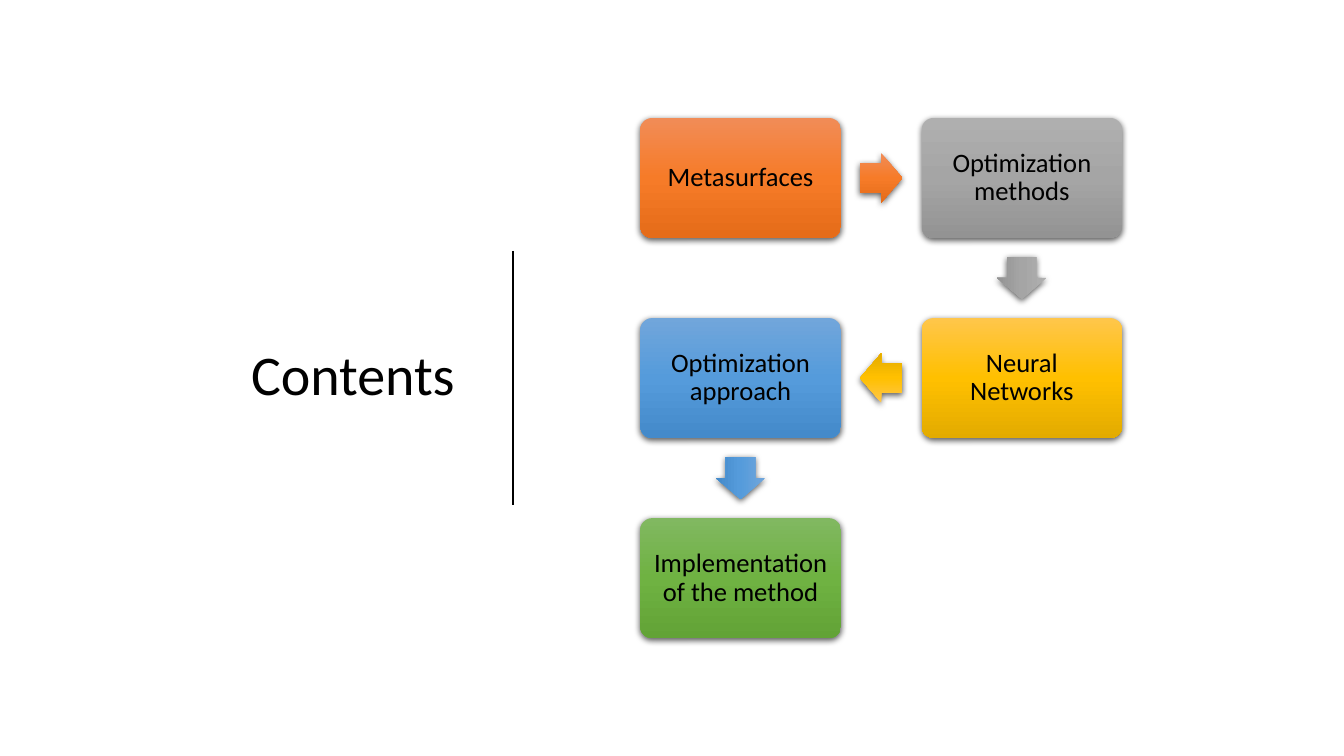
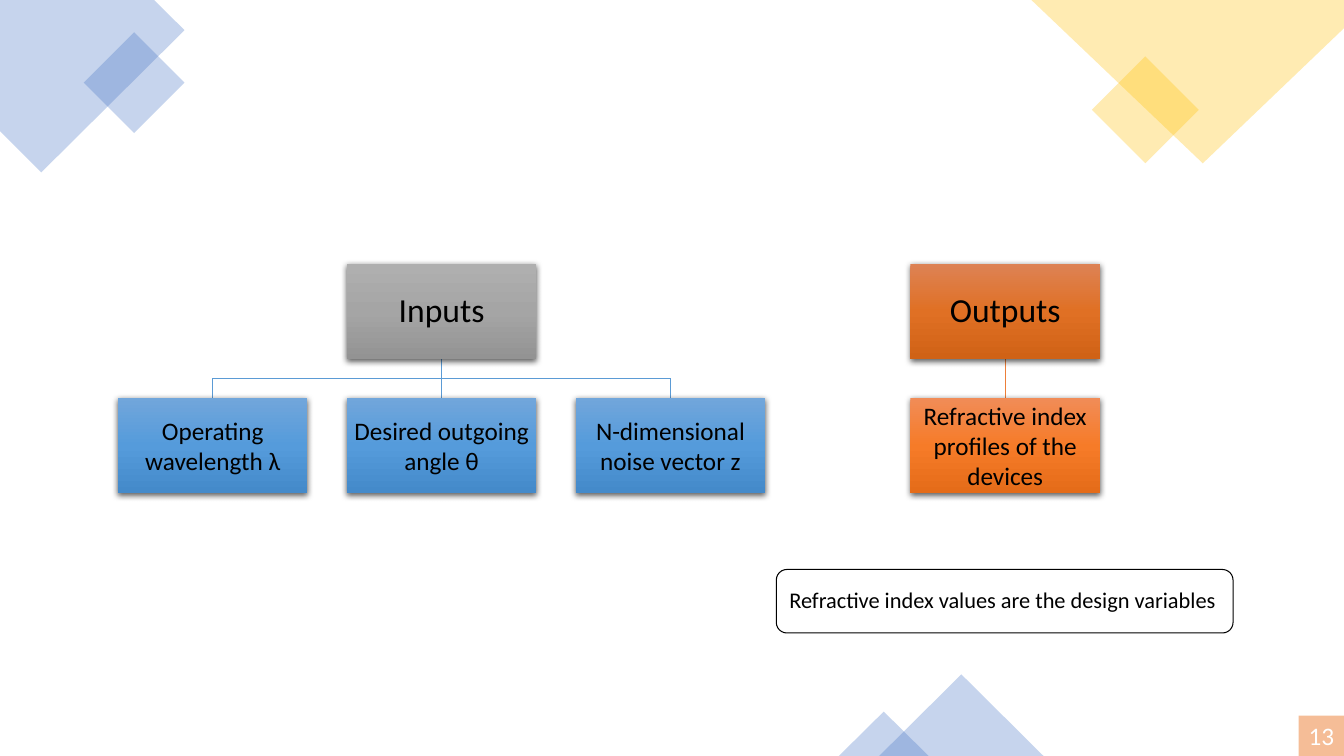
import math
from itertools import pairwise

from lxml import etree
from pptx import Presentation
from pptx import util as u
from pptx.dml.color import RGBColor
from pptx.enum import shapes, text
from pptx.oxml.ns import qn

FONT = "Calibri"
BLACK, WHITE = "000000", "FFFFFF"
PALE_BLUE, PALE_YELLOW, PALE_ORANGE = "4472C4", "FFC000", "ED7D31"
GRADIENTS = {
    "orange": ("F18C57", "F67B28", "E56C19"),
    "rust": ("DD8254", "E07024", "D06216"),
    "gray": ("AFAFAF", "A5A5A5", "939393"),
    "yellow": ("FFC64B", "FFC000", "E3AB00"),
    "blue": ("71A6DB", "559BDB", "448ACA"),
    "green": ("81B861", "6FB242", "62A336"),
}
SHADOW = {"blurRad": u.Pt(4.5), "dist": u.Pt(1.5), "dir": 90 * 60000, "algn": "ctr", "rotWithShape": 0}


def paint(shape, colours, opacity=100):
    """Fill without outline: one hex string is flat, three are a shadowed top-down gradient."""
    properties = shape._element.spPr
    shape.line.fill.background()
    shape.shadow.inherit = False
    if isinstance(colours, str):
        shape.fill.solid()
        shape.fill.fore_color.rgb = RGBColor.from_string(colours)
        tint = properties.find(qn("a:solidFill"))[0]
        etree.SubElement(tint, qn("a:alpha"), val=str(opacity * 1000))
        return
    shape.fill.gradient()
    shape.fill.gradient_angle = 270
    stops = properties.find(qn("a:gradFill")).find(qn("a:gsLst"))
    for stop in list(stops):
        stops.remove(stop)
    for place, colour in zip((0, 50000, 100000), colours):
        stop = etree.SubElement(stops, qn("a:gs"), pos=str(place))
        etree.SubElement(stop, qn("a:srgbClr"), val=colour)
    effects = properties.find(qn("a:effectLst"))
    shadow = etree.SubElement(effects, qn("a:outerShdw"), {key: str(value) for key, value in SHADOW.items()})
    black = etree.SubElement(shadow, qn("a:srgbClr"), val=BLACK)
    etree.SubElement(black, qn("a:alpha"), val="63000")


def write(shape, words, size, inset=0.0, align=text.PP_ALIGN.CENTER, spacing=0.9, colour=BLACK):
    frame = shape.text_frame
    frame.text = words
    frame.word_wrap = True
    frame.vertical_anchor = text.MSO_ANCHOR.MIDDLE
    for side in ("left", "top", "right", "bottom"):
        setattr(frame, f"margin_{side}", u.Inches(inset))
    paragraph = frame.paragraphs[0]
    paragraph.alignment = align
    paragraph.line_spacing = spacing
    paragraph.font.name, paragraph.font.size = FONT, u.Pt(size)
    paragraph.font.color.rgb = RGBColor.from_string(colour)


deck = Presentation()
deck.slide_width, deck.slide_height = u.Inches(13.33), u.Inches(7.5)
contents = deck.slides.add_slide(deck.slide_layouts[5])
network = deck.slides.add_slide(deck.slide_layouts[6])

# Network grid: two rows, three input columns and one output column
NODE_W, NODE_H = 1.88, 0.94
PARENT_Y, CHILD_Y = 2.62, 3.95
input_columns = [1.17 + 2.27 * column for column in range(3)]
output_column = 9.03
input_centres = [left + NODE_W / 2 for left in input_columns]
output_centre = output_column + NODE_W / 2
parent_foot = PARENT_Y + NODE_H
bar_y = (parent_foot + CHILD_Y) / 2

rules = [
    (contents, (5.09, 2.49), (5.09, 5.01), BLACK, 1.5),
    (network, (input_centres[1], parent_foot), (input_centres[1], bar_y), "5B9BD5", 1),
    (network, (input_centres[0], bar_y), (input_centres[-1], bar_y), "5B9BD5", 1),
    (network, (output_centre, parent_foot), (output_centre, CHILD_Y), "ED7F39", 1),
]
rules += [(network, (x, bar_y), (x, CHILD_Y), "5B9BD5", 1) for x in input_centres]
for slide, start, end, colour, width in rules:
    rule = slide.shapes.add_connector(shapes.MSO_CONNECTOR.STRAIGHT, *map(u.Inches, start + end))
    rule.line.color.rgb = RGBColor.from_string(colour)
    rule.line.width = u.Pt(width)
    etree.SubElement(rule._element.spPr, qn("a:effectLst"))

# Contents: a winding path through a grid of two columns and three rows
title = contents.shapes.title
title.left, title.top, title.width, title.height = map(u.Inches, (2.37, 3.37, 2.24, 0.75))
write(title, "Contents", 40, 0.1, text.PP_ALIGN.RIGHT)

STEP_W, STEP_H = 1.99, 1.19
ARROW_W, ARROW_H = 0.42, 0.49
steps = [
    ("Metasurfaces", "orange", 0, 0),
    ("Optimization methods", "gray", 1, 0),
    ("Neural Networks", "yellow", 1, 1),
    ("Optimization approach", "blue", 0, 1),
    ("Implementation of the method", "green", 0, 2),
]
centres = []
for words, hue, column, row in steps:
    left, top = 6.35 + 2.79 * column, 1.17 + 1.985 * row
    centres.append((left + STEP_W / 2, top + STEP_H / 2))
    step = contents.shapes.add_shape(
        shapes.MSO_SHAPE.ROUNDED_RECTANGLE, *map(u.Inches, (left, top, STEP_W, STEP_H)))
    step.adjustments[0] = 0.1
    paint(step, GRADIENTS[hue])
    write(step, words, 19, 0.08)

for (_, hue, _, _), ((x1, y1), (x2, y2)) in zip(steps, pairwise(centres)):
    left, top = (x1 + x2 - ARROW_W) / 2, (y1 + y2 - ARROW_H) / 2
    arrow = contents.shapes.add_shape(
        shapes.MSO_SHAPE.RIGHT_ARROW, *map(u.Inches, (left, top, ARROW_W, ARROW_H)))
    arrow.adjustments[0], arrow.adjustments[1] = 0.6, 0.5
    arrow.rotation = math.degrees(math.atan2(y2 - y1, x2 - x1))
    paint(arrow, GRADIENTS[hue])

# Network: corner decoration, nodes, page number and note
corners = [
    (PALE_BLUE, [(0, 0), (1.53, 0), (1.83, 0.3), (0.41, 1.71), (0, 1.3)]),
    (PALE_YELLOW, [(13.33, 0), (10.23, 0), (11.93, 1.62), (13.33, 0.28)]),
]
for colour, points in corners:
    outline = [(u.Inches(x), u.Inches(y)) for x, y in points]
    builder = network.shapes.build_freeform(*outline[0])
    builder.add_line_segments(outline[1:], close=True)
    paint(builder.convert_to_shape(), colour, 30)

ornaments = [
    (shapes.MSO_SHAPE.DIAMOND, PALE_BLUE, (0.83, 0.32, 1, 1)),
    (shapes.MSO_SHAPE.DIAMOND, PALE_YELLOW, (10.83, 0.56, 1.06, 1.06)),
    (shapes.MSO_SHAPE.ISOSCELES_TRIANGLE, PALE_BLUE, (8.72, 6.69, 1.63, 0.81)),
    (shapes.MSO_SHAPE.ISOSCELES_TRIANGLE, PALE_BLUE, (8.32, 7.06, 0.89, 0.44)),
]
for kind, colour, box in ornaments:
    paint(network.shapes.add_shape(kind, *map(u.Inches, box)), colour, 30)

nodes = [
    ("Inputs", "gray", input_columns[1], PARENT_Y),
    ("Operating wavelength λ", "blue", input_columns[0], CHILD_Y),
    ("Desired outgoing angle θ", "blue", input_columns[1], CHILD_Y),
    ("N-dimensional noise vector z", "blue", input_columns[2], CHILD_Y),
    ("Outputs", "rust", output_column, PARENT_Y),
    ("Refractive index profiles of the devices", "orange", output_column, CHILD_Y),
]
for words, hue, left, top in nodes:
    node = network.shapes.add_shape(
        shapes.MSO_SHAPE.RECTANGLE, *map(u.Inches, (left, top, NODE_W, NODE_H)))
    paint(node, GRADIENTS[hue])
    if top == PARENT_Y:
        write(node, words, 24, 0.02)
    else:
        write(node, words, 18, 0.01, spacing=1.0)

page_number = network.shapes.add_shape(
    shapes.MSO_SHAPE.RECTANGLE, *map(u.Inches, (12.88, 7.1, 0.45, 0.4)))
paint(page_number, PALE_ORANGE, 50)
write(page_number, "13", 18, spacing=1.0, colour=WHITE)

note = network.shapes.add_shape(
    shapes.MSO_SHAPE.ROUNDED_RECTANGLE, *map(u.Inches, (7.7, 5.65, 4.53, 0.63)))
note.shadow.inherit = False
note.fill.background()
note.line.color.rgb = RGBColor.from_string(BLACK)
note.line.width = u.Pt(0.75)
write(note, "Refractive index values are the design variables", 16, 0.1, text.PP_ALIGN.LEFT)

deck.save("out.pptx")
